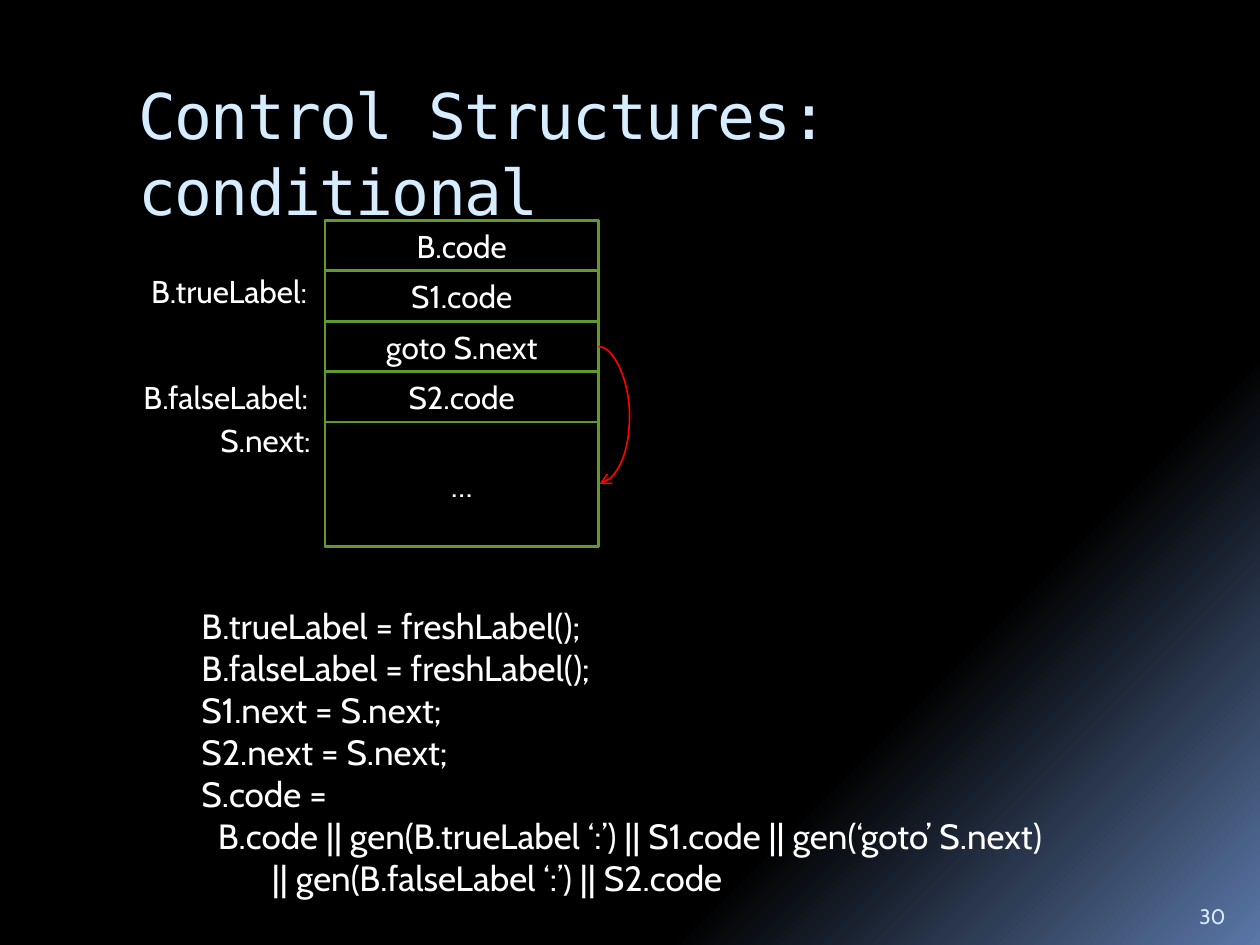
import copy

import pptx
import pptx.dml.color
import pptx.enum.dml
import pptx.enum.shapes
import pptx.enum.text
import pptx.oxml
import pptx.oxml.ns
import pptx.util
from pptx.util import Inches

COLORS = {
    "night": "000000",
    "glow": "5B77A8",
    "heading": "D6ECFF",
    "text": "FFFFFF",
    "block": "5E9B2C",
    "jump": "FF0000",
}
BODY_FONT = "Cabin"
TITLE_FONT = "DejaVu Sans Mono"
ANCHOR = pptx.enum.text.MSO_ANCHOR
ALIGN = pptx.enum.text.PP_ALIGN
FIT = pptx.enum.text.MSO_AUTO_SIZE

# Code layout of the conditional: rows stacked from the top
STACK_LEFT, STACK_TOP, STACK_WIDTH = 2.58, 1.75, 2.17
ROWS = [("B.code", 0.4), ("S1.code", 0.4), ("goto S.next", 0.4),
        ("S2.code", 0.4), ("…", 0.99)]

# Labels end at one right edge: text, top, width
LABEL_RIGHT = 2.59
LABELS = [("B.trueLabel:", 2.11, 1.49), ("B.falseLabel:", 2.95, 1.55),
          ("S.next:", 3.29, 0.94)]

# Semantic rules: text, indent
RULES = [
    ("B.trueLabel = freshLabel();", 0),
    ("B.falseLabel = freshLabel();", 0),
    ("S1.next = S.next;", 0),
    ("S2.next = S.next;", 0),
    ("S.code =", 0),
    ("B.code || gen(B.trueLabel ‘:’) || S1.code || gen(‘goto’ S.next)", 0.13),
    ("|| gen(B.falseLabel ‘:’) || S2.code", 0.56),
]


def rgb(name):
    return pptx.dml.color.RGBColor.from_string(COLORS[name])


def apply_format(target, values):
    for attribute, value in values.items():
        setattr(target, attribute, value)


def write(shape, lines, size, color="text", font=BODY_FONT,
          align=ALIGN.LEFT, **frame_format):
    """Fill a shape with (text, indent) lines in one style."""
    frame = shape.text_frame
    apply_format(frame, {"word_wrap": True, "vertical_anchor": ANCHOR.TOP,
                         **frame_format})
    for index, (text, indent) in enumerate(lines):
        paragraph = frame.add_paragraph() if index else frame.paragraphs[0]
        paragraph.alignment = align
        run = paragraph.add_run()
        run.text = text
        apply_format(run.font, {"name": font, "size": pptx.util.Pt(size)})
        run.font.color.rgb = rgb(color)
        if indent:
            paragraph._p.get_or_add_pPr().set("marL", str(Inches(indent)))


def paint_background(slide):
    fill = slide.background.fill
    fill.gradient()
    fill.gradient_angle = 315
    stop_list = slide.element.xpath(".//a:gsLst")[0]
    stop_list.append(copy.deepcopy(stop_list[0]))
    stops = [(0.65, "night"), (0.73, "night"), (1, "glow")]
    for stop, (position, color) in zip(fill.gradient_stops, stops):
        stop.position = position
        stop.color.rgb = rgb(color)


def add_title(slide, text):
    title = slide.shapes.title
    apply_format(title, {"left": Inches(1), "top": Inches(0.56),
                         "width": Inches(8.5), "height": Inches(1)})
    write(title, [(text, 0)], 36, "heading", TITLE_FONT, auto_size=FIT.NONE)
    title.text_frame.paragraphs[0].runs[0].font._element.set("spc", "-100")


def add_text(slide, box, lines, size, color="text", **frame_format):
    text_box = slide.shapes.add_textbox(*map(Inches, box))
    write(text_box, lines, size, color, **frame_format)


def add_block(slide, top, height, text=None):
    block = slide.shapes.add_shape(
        pptx.enum.shapes.MSO_SHAPE.RECTANGLE, Inches(STACK_LEFT), Inches(top),
        Inches(STACK_WIDTH), Inches(height))
    block.shadow.inherit = False
    block.fill.background()
    block.line.color.rgb = rgb("block")
    block.line.width = pptx.util.Pt(1.5)
    if text:
        write(block, [(text, 0)], 18, align=ALIGN.CENTER,
              vertical_anchor=ANCHOR.MIDDLE)


def add_jump(slide, start, end, bulge):
    """Curved arrow that swings out to the right by bulge inches."""
    jump = slide.shapes.add_connector(
        pptx.enum.shapes.MSO_CONNECTOR.CURVE, *map(Inches, start + end))
    jump.line.color.rgb = rgb("jump")
    jump.line.width = pptx.util.Pt(0.94)
    properties = jump._element.spPr
    guides = properties.prstGeom.get_or_add_avLst()
    guide = pptx.oxml.parse_xml(
        f'<a:gd {pptx.oxml.ns.nsdecls("a")} name="adj1"/>')
    guide.set("fmla", f"val {round(bulge / (end[0] - start[0]) * 100000)}")
    guides.append(guide)
    jump.line._get_or_add_ln().append(pptx.oxml.parse_xml(
        f'<a:tailEnd {pptx.oxml.ns.nsdecls("a")} type="arrow"/>'))
    properties.append(pptx.oxml.parse_xml(
        f'<a:effectLst {pptx.oxml.ns.nsdecls("a")}/>'))


def main():
    deck = pptx.Presentation()
    apply_format(deck, {"slide_width": Inches(10),
                        "slide_height": Inches(7.5)})
    slide = deck.slides.add_slide(deck.slide_layouts.get_by_name("Title Only"))
    paint_background(slide)

    # Page number and title
    add_text(slide, (9.42, 7.02, 0.5, 0.4), [("30", 0)], 12, "heading",
             vertical_anchor=ANCHOR.BOTTOM)
    add_title(slide, "Control Structures: conditional")

    # Outer frame, then the code rows
    add_block(slide, STACK_TOP, sum(height for _, height in ROWS))
    top = STACK_TOP
    for text, height in ROWS:
        add_block(slide, top, height, text)
        top += height

    # Labels beside the rows
    for text, label_top, width in LABELS:
        add_text(slide, (LABEL_RIGHT - width, label_top, width, 0.4),
                 [(text, 0)], 18, word_wrap=False,
                 auto_size=FIT.SHAPE_TO_FIT_TEXT)

    # Jump from the goto row to the code that follows
    add_jump(slide, (4.75, 2.75), (4.76, 3.84), 0.25)

    # Semantic rules
    add_text(slide, (1.5, 4.75, 7.08, 2.46), RULES, 20,
             auto_size=FIT.SHAPE_TO_FIT_TEXT)
    deck.save("out.pptx")


if __name__ == "__main__":
    main()
